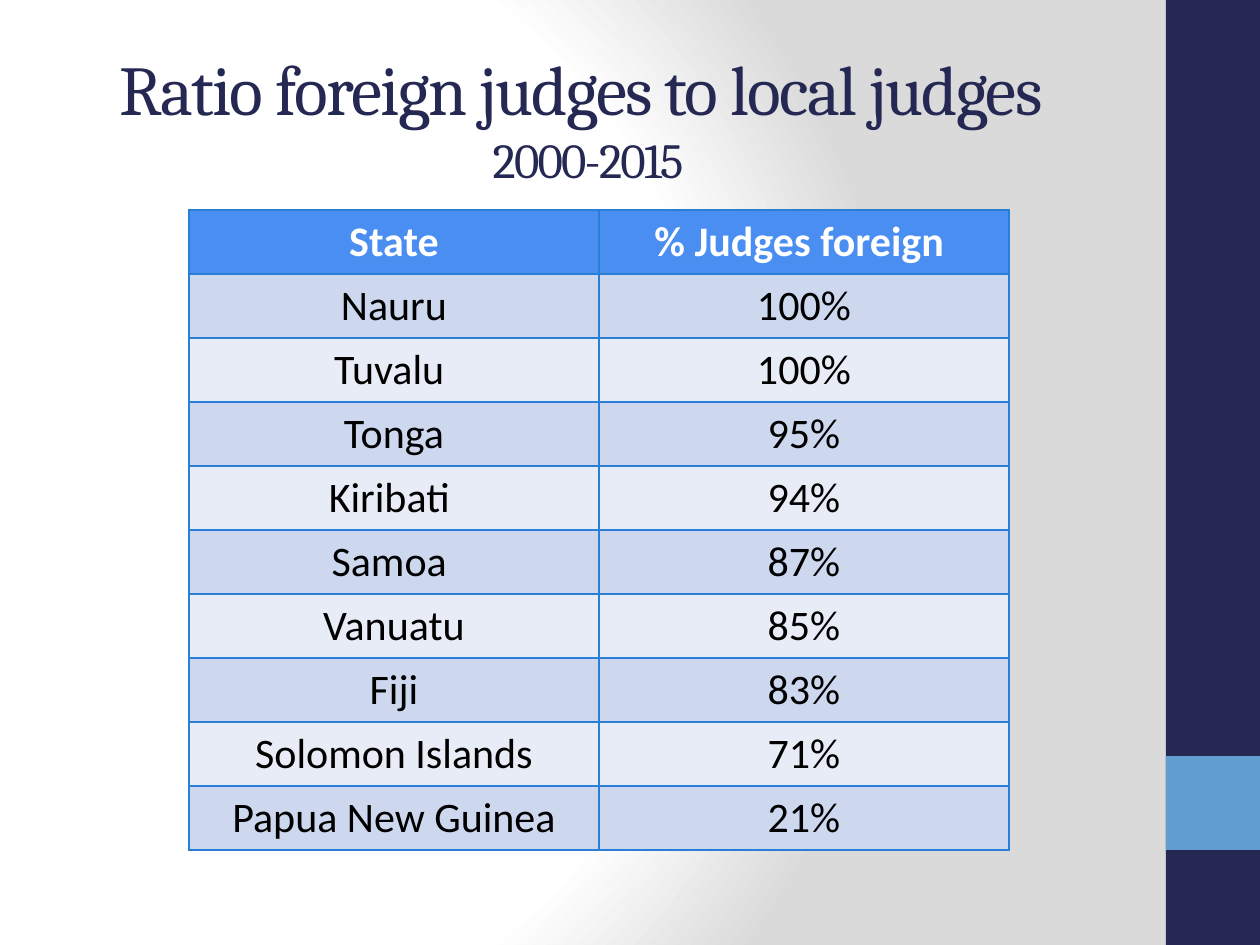
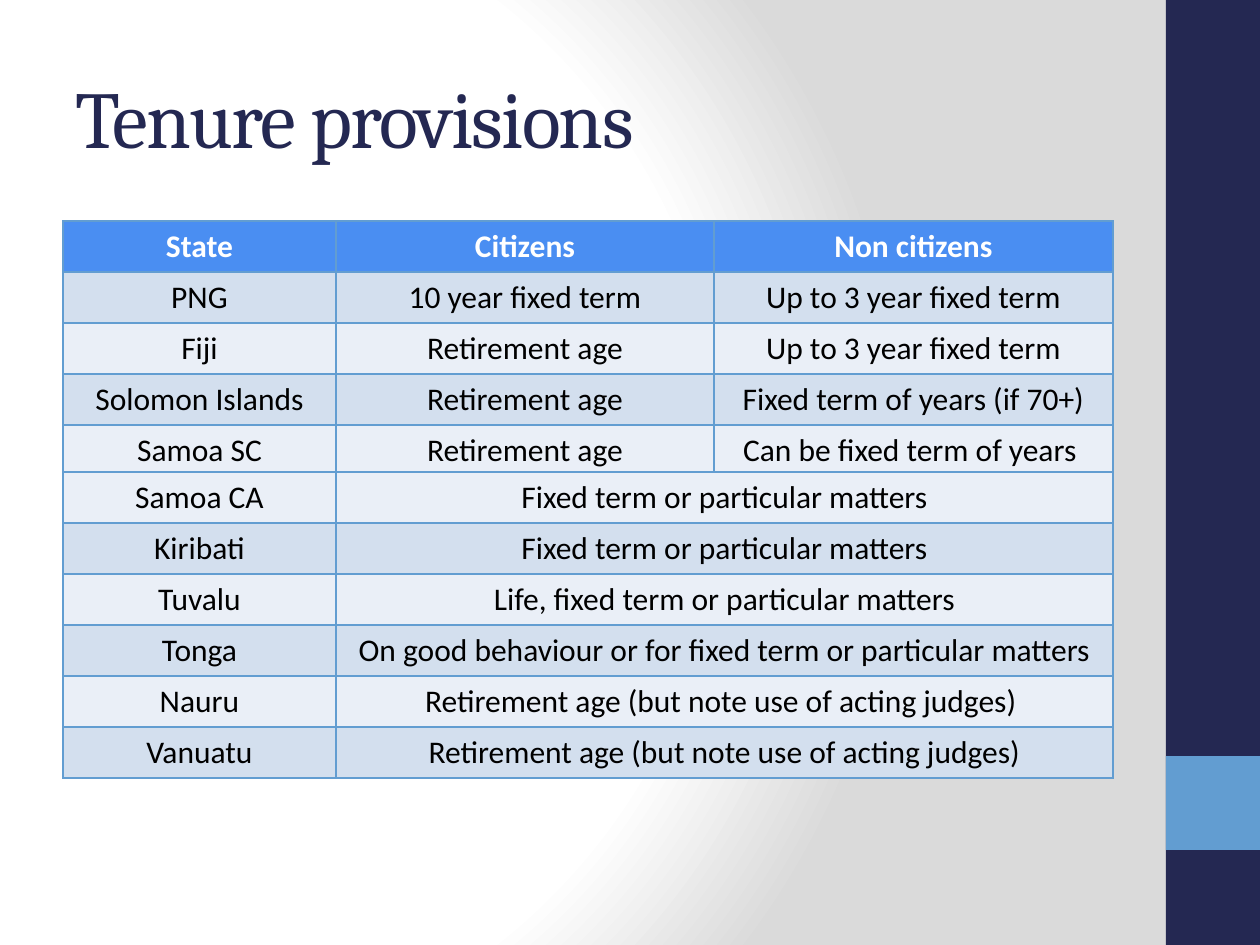
import pptx
import pptx.util
import pptx.dml.color
import pptx.enum.shapes
import pptx.enum.text
import pptx.oxml
import pptx.oxml.ns

PX = 914400 // 126
NAVY, SKY, BLUE = "242852", "629DD1", "297FD5"
HEADER, WHITE, BLACK, GREY = "4A8EF2", "FFFFFF", "000000", "DADADA"
TITLE_FONT, BODY_FONT = "Cambria", "Calibri"
CENTER = pptx.enum.text.PP_ALIGN.CENTER
LEFT = pptx.enum.text.PP_ALIGN.LEFT
NS = pptx.oxml.ns.nsdecls("a")

JUDGES = [
    ("State", "% Judges foreign "),
    ("Nauru", "100%"),
    ("Tuvalu ", "100%"),
    ("Tonga", "95%"),
    ("Kiribati ", "94%"),
    ("Samoa ", "87%"),
    ("Vanuatu", "85%"),
    ("Fiji", "83%"),
    ("Solomon Islands", "71%"),
    ("Papua New Guinea", "21%"),
]
TENURE_SPLIT = [
    ("State", "Citizens", "Non citizens"),
    ("PNG", "10 year fixed term", "Up to 3 year fixed term"),
    ("Fiji", "Retirement age", "Up to 3 year fixed term"),
    ("Solomon Islands", "Retirement age", "Fixed term of years (if 70+)"),
    ("Samoa SC", "Retirement age", "Can be fixed term of years "),
]
TENURE_JOINT = [
    ("Samoa CA", "Fixed term or particular matters"),
    ("Kiribati", "Fixed term or particular matters"),
    ("Tuvalu", "Life, fixed term or particular matters"),
    ("Tonga", "On good behaviour or for fixed term or particular matters"),
    ("Nauru", "Retirement age (but note use of acting judges) "),
    ("Vanuatu", "Retirement age (but note use of acting judges)"),
]


def px(*lengths):
    return [pptx.util.Emu(n * PX) for n in lengths]


def rgb(color):
    return pptx.dml.color.RGBColor.from_string(color)


def add_run(p, text, size, font, color, bold=False):
    r = p.add_run()
    r.text = text
    r.font.size = pptx.util.Pt(size)
    r.font.name = font
    r.font.bold = bold
    r.font.color.rgb = rgb(color)
    return r


# Shared frame: background and side bands
def set_background(s):
    fill = s.background.fill
    fill.gradient()
    grad = s.background._cSld.bg.bgPr.find(pptx.oxml.ns.qn("a:gradFill"))
    stops = "".join(
        f'<a:gs pos="{pos * 1000}"><a:srgbClr val="{color}"/></a:gs>'
        for pos, color in ((0, WHITE), (75, WHITE), (100, GREY)))
    radial = pptx.oxml.parse_xml(
        f'<a:gradFill {NS} rotWithShape="1"><a:gsLst>{stops}</a:gsLst>'
        '<a:path path="circle"><a:fillToRect l="20000" t="50000" '
        'r="100000" b="50000"/></a:path></a:gradFill>')
    grad.getparent().replace(grad, radial)


def add_band(s, top, height, color):
    sp = s.shapes.add_shape(pptx.enum.shapes.MSO_SHAPE.RECTANGLE,
                            *px(1166, top, 94, height))
    sp.shadow.inherit = False
    sp.fill.solid()
    sp.fill.fore_color.rgb = rgb(color)
    sp.line.fill.background()


def add_slide(prs):
    s = prs.slides.add_slide(prs.slide_layouts[6])
    set_background(s)
    add_band(s, 0, 945, NAVY)
    add_band(s, 756, 94, SKY)
    return s


def add_title(s, lines, align):
    """Each line is a (text, size) pair."""
    tf = s.shapes.add_textbox(*px(63, 38, 1050, 157)).text_frame
    tf.word_wrap = True
    tf.vertical_anchor = pptx.enum.text.MSO_ANCHOR.MIDDLE
    p = tf.paragraphs[0]
    p.alignment = align
    for i, (text, size) in enumerate(lines):
        if i:
            p.add_line_break()
        r = add_run(p, text, size, TITLE_FONT, NAVY)
        r.font._element.set("spc", "-100")


# Tables
def add_borders(cell, color):
    tc_pr = cell._tc.get_or_add_tcPr()
    for side in "LRTB":
        tc_pr.append(pptx.oxml.parse_xml(
            f'<a:ln{side} {NS} w="12700"><a:solidFill>'
            f'<a:srgbClr val="{color}"/></a:solidFill></a:ln{side}>'))


def add_grid(s, left, top, widths, row_height, rows, size, border, bands,
             header=True):
    """Bands holds the fills of even and odd rows, counted from 0."""
    frame = s.shapes.add_table(
        len(rows), len(widths),
        *px(left, top, sum(widths), row_height * len(rows)))
    table = frame.table
    table.first_row = header
    for column, width in zip(table.columns, px(*widths)):
        column.width = width
    for i, texts in enumerate(rows):
        table.rows[i].height = px(row_height)[0]
        is_head = header and i == 0
        for j, text in enumerate(texts):
            cell = table.cell(i, j)
            add_borders(cell, border)
            cell.fill.solid()
            cell.fill.fore_color.rgb = rgb(HEADER if is_head else bands[i % 2])
            p = cell.text_frame.paragraphs[0]
            p.alignment = CENTER
            add_run(p, text, size, BODY_FONT,
                    WHITE if is_head else BLACK, is_head)


def main():
    prs = pptx.Presentation()
    prs.slide_width, prs.slide_height = px(1260, 945)

    # Share of foreign judges
    s = add_slide(prs)
    add_title(s, [("Ratio foreign judges to local judges ", 40),
                  ("2000-2015", 28)], CENTER)
    add_grid(s, 189, 210, (410, 410), 64, JUDGES, 24, BLUE,
             ("E8ECF7", "CDD8EF"))

    # Tenure by citizenship, then tenure shared by all judges
    s = add_slide(prs)
    add_title(s, [("Tenure provisions", 46)], LEFT)
    tenure_bands = ("EAEFF7", "D3DFEE")
    add_grid(s, 63, 221, (273, 378, 399), 51, TENURE_SPLIT, 18, SKY,
             tenure_bands)
    add_grid(s, 63, 472, (273, 777), 51, TENURE_JOINT, 18, SKY,
             tenure_bands, header=False)

    prs.save("out.pptx")


if __name__ == "__main__":
    main()
